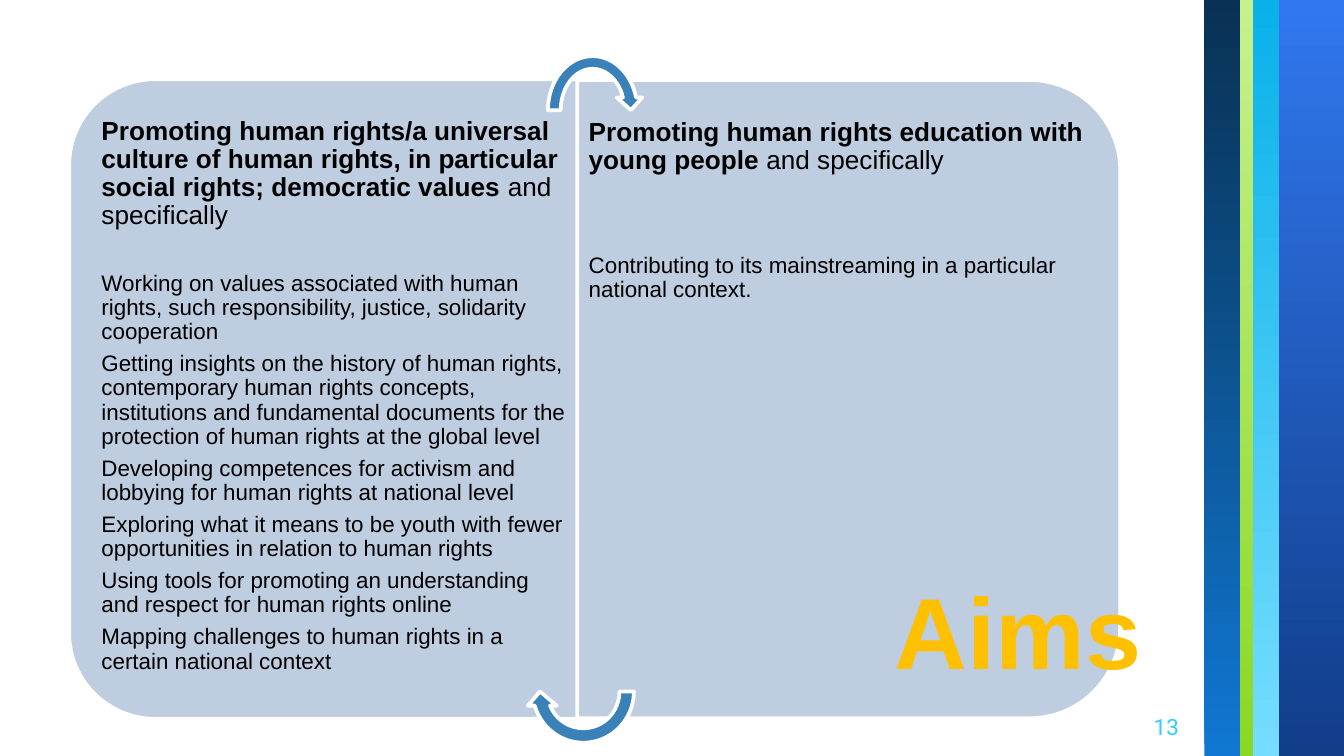
from pptx import Presentation
from pptx.dml.color import RGBColor
from pptx.enum.shapes import MSO_SHAPE
from pptx.enum.text import MSO_ANCHOR, PP_ALIGN
from pptx.util import Inches, Pt

THEME = {
    "panel": "BFCDE0", "arrow": "3A81BA", "edge": "FFFFFF", "edge_width": Pt(2),
    "heading": {"size": Pt(14), "name": "Arial", "color": "000000"},
    "body": {"size": Pt(12), "name": "Arial", "color": "000000"},
    "title": {"size": Pt(54), "name": "Arial", "color": "FFC000", "bold": True},
    "number": {"size": Pt(12), "name": "Roboto", "color": "33CCFF"},
}

# Widescreen slide, 16 by 9
presentation = Presentation()
presentation.slide_width = Inches(10)
presentation.slide_height = presentation.slide_width * 9 // 16
slide = presentation.slides.add_slide(presentation.slide_layouts[6])

# Square grid: 100 columns across, rows of the same size
COLUMN = presentation.slide_width / 100
ROWS = presentation.slide_height / COLUMN


def add_shape(kind, box, rotation=0, color=None, adjustments=()):
    shape = slide.shapes.add_shape(kind, *(round(length * COLUMN) for length in box))
    shape.shadow.inherit = False
    shape.rotation = rotation
    for index, value in enumerate(adjustments):
        shape.adjustments[index] = value
    if color:
        shape.fill.solid()
        shape.fill.fore_color.rgb = RGBColor.from_string(color)
        shape.line.color.rgb = RGBColor.from_string(THEME["edge"])
        shape.line.width = THEME["edge_width"]
    else:
        shape.line.fill.background()
    return shape


def add_text(box, paragraphs, frame_format, paragraph_format):
    """Each paragraph is (space after in points, [(text, style), ...])."""
    text_box = slide.shapes.add_textbox(*(round(length * COLUMN) for length in box))
    frame = text_box.text_frame
    for name, value in frame_format.items():
        setattr(frame, name, value)
    for index, (space_after, runs) in enumerate(paragraphs):
        paragraph = frame.add_paragraph() if index else frame.paragraphs[0]
        paragraph.space_after = Pt(space_after)
        for name, value in paragraph_format.items():
            setattr(paragraph, name, value)
        for text, style in runs:
            run = paragraph.add_run()
            run.text = text
            for name, value in style.items():
                if name == "color":
                    run.font.color.rgb = RGBColor.from_string(value)
                else:
                    setattr(run.font, name, value)


# Gradient stripes on the right: left, width, rotation, two colours
stripes = [
    (95.13, 4.87, 0, ("3177EE", "113D8A")),
    (93.2, 1.95, 180, ("75DDFF", "09B1E9")),
    (92.25, 1, 0, ("C6F18D", "8AD824")),
    (89.6, 2.65, 180, ("1077D2", "093153")),
]
for left, width, rotation, colors in stripes:
    stripe = add_shape(MSO_SHAPE.RECTANGLE, (left, 0, width, ROWS), rotation)
    stripe.fill.gradient()
    stripe.fill.gradient_angle = 270
    for stop, color in zip(stripe.fill.gradient_stops, colors):
        stop.color.rgb = RGBColor.from_string(color)

# Slide number
add_text((82.7, 51.9, 6, 4.3), [(0, [("13", THEME["number"])])],
         {"word_wrap": True, "vertical_anchor": MSO_ANCHOR.MIDDLE},
         {"alignment": PP_ALIGN.RIGHT})

# Two panels with their aims
NARROW, WIDE = Inches(0.06), Inches(0.09)
panels = [
    {
        "box": (0.5, 10.54, 47.6, 38.3), "rotation": 270,
        "text_box": (6.95, 7.75, 36.5, 43.8), "margins": (NARROW, WIDE), "gap": 22.2,
        "heading": "Promoting human rights/a universal culture of human rights, "
                   "in particular social rights; democratic values ",
        "aims": [
            "Working on values associated with human rights, such responsibility, "
            "justice, solidarity cooperation",
            "Getting insights on the history of human rights, contemporary human rights "
            "concepts, institutions and fundamental documents for the protection of "
            "human rights at the global level",
            "Developing competences for activism and lobbying for human rights at "
            "national level",
            "Exploring what it means to be youth with fewer opportunities in relation "
            "to human rights",
            "Using tools for promoting an understanding and respect for human rights "
            "online",
            "Mapping challenges to human rights in a certain national context",
        ],
    },
    {
        "box": (39.4, 9.5, 47.5, 40.4), "rotation": 90,
        "text_box": (42.9, 7.85, 38.5, 43.6), "margins": (WIDE, NARROW), "gap": 42.2,
        "heading": "Promoting human rights education with young people ",
        "aims": ["Contributing to its mainstreaming in a particular national context."],
    },
]
for panel in panels:
    add_shape(MSO_SHAPE.ROUND_2_SAME_RECTANGLE, panel["box"], panel["rotation"],
              THEME["panel"], (0.167, 0))
    heading = [(panel["heading"], THEME["heading"] | {"bold": True}),
               ("and specifically", THEME["heading"])]
    paragraphs = [(panel["gap"], heading)]
    paragraphs += [(4.2, [(aim, THEME["body"])]) for aim in panel["aims"]]
    margin_left, margin_right = panel["margins"]
    add_text(panel["text_box"], paragraphs,
             {"word_wrap": True, "margin_left": margin_left, "margin_right": margin_right,
              "margin_top": Inches(0.1), "margin_bottom": Inches(0.1)},
             {"line_spacing": 0.9})

# Circular arrows linking the panels
for box, rotation in [((40.3, 3.7, 7.6, 9), 0), ((39.1, 47.1, 8.6, 8.7), 180)]:
    add_shape(MSO_SHAPE.CIRCULAR_ARROW, box, rotation, THEME["arrow"],
              (0.125, 11.42, 204.58, 108, 0.125))

# Title
add_text((65.5, 41.85, 20.5, 10.1), [(0, [("Aims", THEME["title"])])],
         {"word_wrap": False}, {"alignment": PP_ALIGN.CENTER})

presentation.save("out.pptx")
